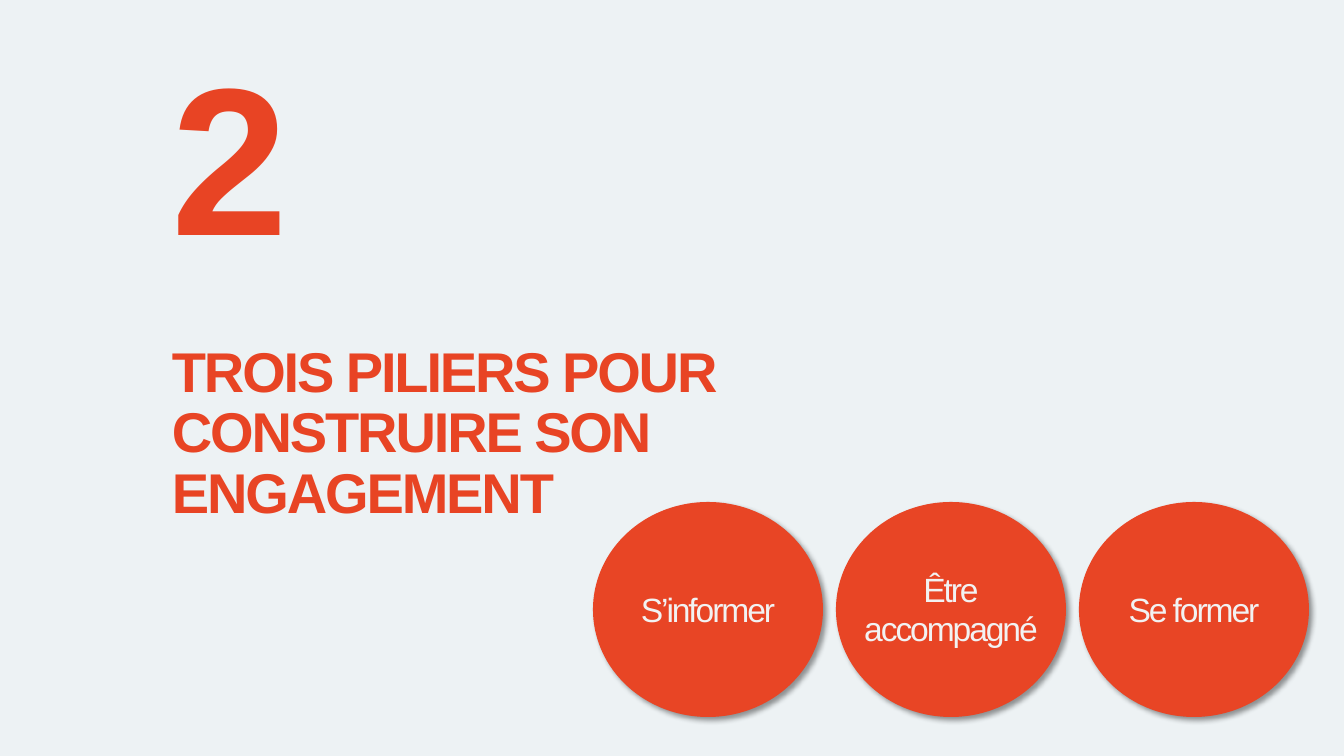
from lxml.etree import SubElement
from pptx import Presentation
from pptx.dml.color import RGBColor
from pptx.enum.shapes import MSO_SHAPE
from pptx.enum.text import MSO_ANCHOR, PP_ALIGN
from pptx.oxml.ns import qn
from pptx.util import Emu, Pt

EMU_PER_PX = 914400 / 100.8
BACKGROUND = "EDF2F4"
HEADING = "E84424"
PILLAR_FILL = "E84525"
PILLAR_TEXT = "F2F2F2"
PILLARS = [["S’informer"], ["Être", "accompagné"], ["Se former"]]


def px(length):
    return Emu(round(length * EMU_PER_PX))


def color(value):
    return RGBColor.from_string(value)


class SectionSlide:
    font = "Arial"

    def __init__(self, presentation):
        self.slide = presentation.slides.add_slide(presentation.slide_layouts[6])
        fill = self.slide.background.fill
        fill.solid()
        fill.fore_color.rgb = color(BACKGROUND)

    def add_run(self, paragraph, text, size, text_color, bold=False, spacing=0):
        """Spacing is the gap between letters, in hundredths of a point."""
        run = paragraph.add_run()
        run.text = text
        run.font.name = self.font
        run.font.size = Pt(size)
        run.font.bold = bold
        run.font.color.rgb = color(text_color)
        if spacing:
            run.font._element.set("spc", str(spacing))

    def add_heading(self, box, text, size, anchor, line_spacing=1.0, spacing=0):
        shape = self.slide.shapes.add_textbox(*map(px, box))
        frame = shape.text_frame
        frame.word_wrap = True
        frame.vertical_anchor = anchor
        paragraph = frame.paragraphs[0]
        paragraph.line_spacing = line_spacing
        self.add_run(paragraph, text, size, HEADING, True, spacing)

    def add_shadow(self, shape):
        shape.shadow.inherit = False
        effects = shape._element.spPr.find(qn("a:effectLst"))
        shadow = SubElement(
            effects, qn("a:outerShdw"), blurRad=str(Pt(4)), dist=str(Pt(3)),
            dir=str(45 * 60000), algn="tl", rotWithShape="0")
        shade = SubElement(shadow, qn("a:srgbClr"), val="000000")
        SubElement(shade, qn("a:alpha"), val="40000")

    def add_pillar(self, box, lines):
        shape = self.slide.shapes.add_shape(MSO_SHAPE.OVAL, *map(px, box))
        shape.fill.solid()
        shape.fill.fore_color.rgb = color(PILLAR_FILL)
        shape.line.fill.background()
        self.add_shadow(shape)
        frame = shape.text_frame
        frame.word_wrap = False
        frame.margin_left = frame.margin_right = 0
        frame.vertical_anchor = MSO_ANCHOR.MIDDLE
        for index, line in enumerate(lines):
            paragraph = frame.add_paragraph() if index else frame.paragraphs[0]
            paragraph.alignment = PP_ALIGN.CENTER
            if len(lines) > 1:
                paragraph.line_spacing = Pt(28)
            self.add_run(paragraph, line, 24, PILLAR_TEXT, spacing=-150)


def main():
    presentation = Presentation()
    presentation.slide_width = px(1344)
    presentation.slide_height = px(756)
    section = SectionSlide(presentation)
    section.add_heading(
        (162, 194, 655, 481), "TROIS PILIERS POUR CONSTRUIRE SON ENGAGEMENT",
        40, MSO_ANCHOR.MIDDLE, line_spacing=0.9, spacing=-150)
    section.add_heading((162, 21, 232, 265), "2", 150, MSO_ANCHOR.TOP)
    for index, lines in enumerate(PILLARS):
        section.add_pillar((593 + 243 * index, 502, 230, 215), lines)
    presentation.save("out.pptx")


if __name__ == "__main__":
    main()
